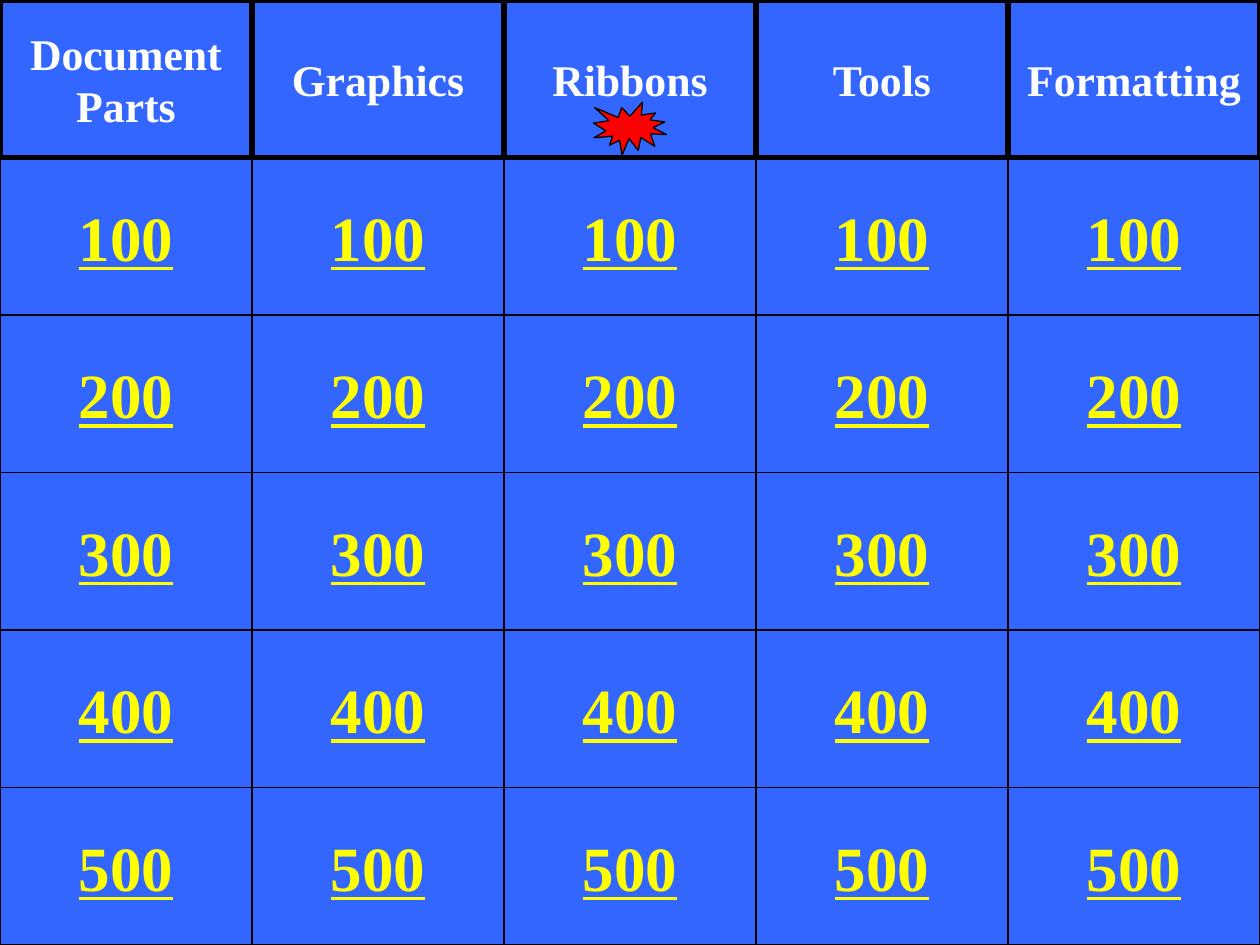
from dataclasses import dataclass

from pptx import Presentation
from pptx.dml.color import RGBColor
from pptx.enum.shapes import MSO_SHAPE
from pptx.enum.text import MSO_ANCHOR, PP_ALIGN
from pptx.util import Inches, Pt

RECTANGLE = MSO_SHAPE.RECTANGLE
BUTTON = MSO_SHAPE.ACTION_BUTTON_CUSTOM
BURST = MSO_SHAPE.EXPLOSION1
MIDDLE = MSO_ANCHOR.MIDDLE
CENTER = PP_ALIGN.CENTER
BLANK_LAYOUT = 6


@dataclass(frozen=True)
class Theme:
    """Colours, type and line widths of the game board."""
    board: RGBColor = RGBColor(0x33, 0x66, 0xFF)
    outline: RGBColor = RGBColor(0, 0, 0)
    category: RGBColor = RGBColor(0xFF, 0xFF, 0xFF)
    points: RGBColor = RGBColor(0xFF, 0xFF, 0)
    burst: RGBColor = RGBColor(0xFF, 0, 0)
    font: str = "Times New Roman"
    category_size: Pt = Pt(25)
    points_size: Pt = Pt(36)
    thin: Pt = Pt(0.75)
    thick: Pt = Pt(3)


THEME = Theme()
CATEGORIES = ["Document\vParts", "Graphics", "Ribbons", "Tools", "Formatting"]
POINTS = [100, 200, 300, 400, 500]
CATEGORY_FORMAT = {"name": THEME.font, "size": THEME.category_size, "bold": True}
POINTS_FORMAT = {"name": THEME.font, "size": THEME.points_size, "bold": True,
                 "underline": True}


def add_outlined(slide, kind, box, fill, line_width):
    """Add a filled preset shape with a black outline."""
    shape = slide.shapes.add_shape(kind, *box)
    shape.shadow.inherit = False
    shape.fill.solid()
    shape.fill.fore_color.rgb = fill
    shape.line.color.rgb = THEME.outline
    shape.line.width = line_width
    return shape


def add_label(tile, text, color, font_format):
    """Centre one formatted label in a tile."""
    frame = tile.text_frame
    frame.word_wrap = False
    frame.vertical_anchor = MIDDLE
    label = frame.paragraphs[0]
    label.text = text
    label.alignment = CENTER
    for run in label.runs:
        run.font.color.rgb = color
        for attribute, value in font_format.items():
            setattr(run.font, attribute, value)


def add_points_grid(slide, left, top, width, height):
    """Fill the box with one column of point buttons per category."""
    column_width = width // len(CATEGORIES)
    row_height = height // len(POINTS)
    for column in range(len(CATEGORIES)):
        for row, points in enumerate(POINTS):
            box = (left + column * column_width, top + row * row_height,
                   column_width, row_height)
            button = add_outlined(slide, BUTTON, box, THEME.board, THEME.thin)
            add_label(button, str(points), THEME.points, POINTS_FORMAT)


def add_category_row(slide, left, top, width, height):
    """Fill the box with the category headings side by side."""
    column_width = width // len(CATEGORIES)
    for column, category in enumerate(CATEGORIES):
        box = (left + column * column_width, top, column_width, height)
        heading = add_outlined(slide, RECTANGLE, box, THEME.board, THEME.thick)
        add_label(heading, category, THEME.category, CATEGORY_FORMAT)


def build_board(slide, width, height):
    """Lay out the headings, the point buttons and the burst."""
    slide.background.fill.solid()
    slide.background.fill.fore_color.rgb = THEME.board
    heading_height = height // (len(POINTS) + 1)
    add_points_grid(slide, 0, heading_height, width, height - heading_height)
    add_category_row(slide, 0, 0, width, heading_height)
    burst_box = (Inches(4.71), Inches(0.81), Inches(0.58), Inches(0.42))
    add_outlined(slide, BURST, burst_box, THEME.burst, THEME.thin)


def main():
    """Build and save the one-slide presentation."""
    presentation = Presentation()
    presentation.slide_width = Inches(10)
    presentation.slide_height = Inches(7.5)
    slide = presentation.slides.add_slide(presentation.slide_layouts[BLANK_LAYOUT])
    build_board(slide, presentation.slide_width, presentation.slide_height)
    presentation.save("out.pptx")


if __name__ == "__main__":
    main()
